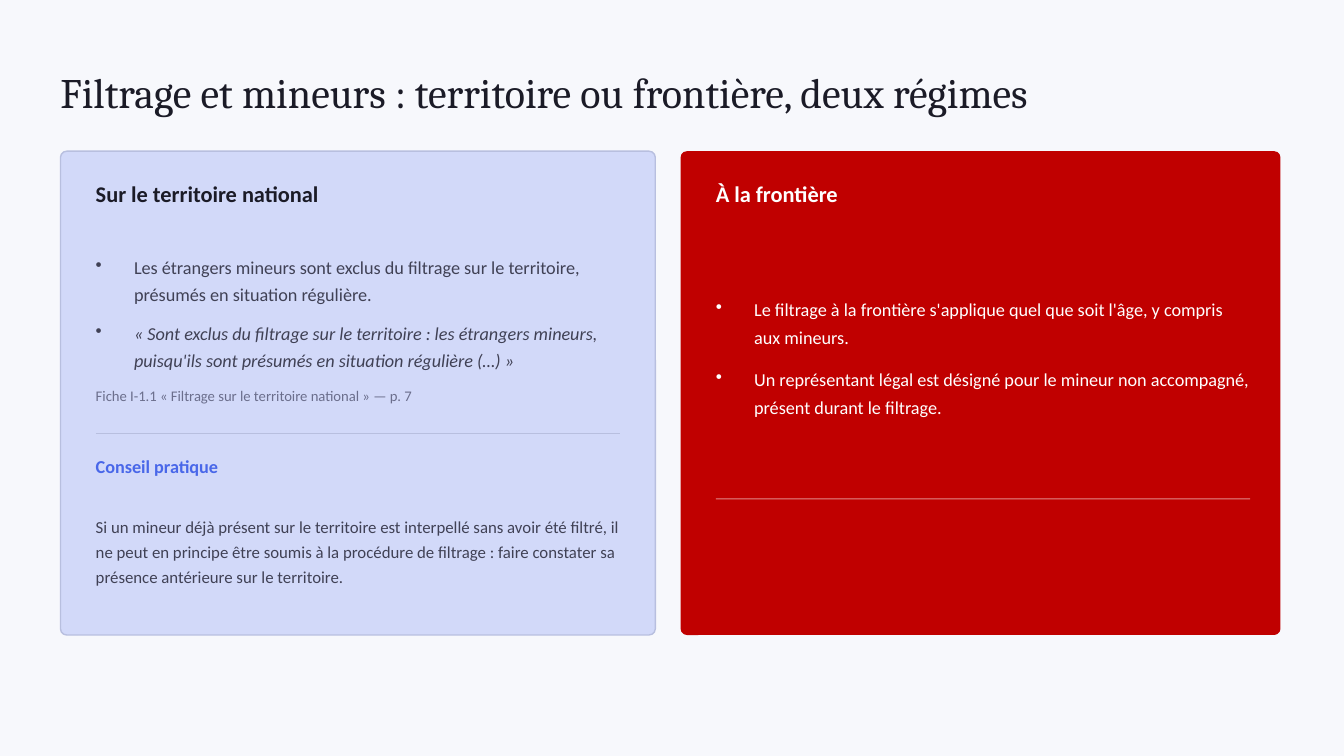
"""Build the slide comparing screening of minors inland and at the border."""
from dataclasses import dataclass

from lxml import etree
from pptx import Presentation
from pptx import util as u
from pptx.dml.color import RGBColor
from pptx.enum import shapes, text
from pptx.oxml.ns import qn
from pptx.slide import Slide

PX = 9144
PAGE_WIDTH, PAGE_HEIGHT = 1333, 750
BULLET_INDENT = 38
CARD_TOP, CARD_HEIGHT, CARD_PADDING = 150, 480, 35

PAPER = RGBColor(0xF7, 0xF8, 0xFC)
INK = RGBColor(0x1B, 0x1B, 0x27)
BODY = RGBColor(0x40, 0x41, 0x55)
MUTED = RGBColor(0x6B, 0x6E, 0x8C)
ACCENT = RGBColor(0x49, 0x67, 0xE9)
LAVENDER = RGBColor(0xD2, 0xD9, 0xF9)
EDGE = RGBColor(0xB8, 0xBF, 0xDF)
RED = RGBColor(0xC0, 0x00, 0x00)
WHITE = RGBColor(0xFF, 0xFF, 0xFF)


@dataclass(frozen=True)
class Line:
    """One paragraph with its type style."""

    words: str
    size: float
    color: RGBColor
    font: str = "Calibri"
    bold: bool = False
    italic: bool = False
    bullet: bool = False


@dataclass(frozen=True)
class Block:
    """Paragraphs placed by top and height, sharing their spacing."""

    top: int
    height: int
    lines: tuple[Line, ...]
    spacing: float = 1.0
    after: int = 0


@dataclass(frozen=True)
class Rule:
    """A horizontal divider inside a card."""

    top: int
    color: RGBColor
    weight: float
    opacity: int = 100


@dataclass(frozen=True)
class Card:
    """A rounded panel with its divider and text blocks."""

    left: int
    width: int
    text_width: int
    fill: RGBColor
    edge: RGBColor | None
    rule: Rule
    blocks: tuple[Block, ...]


TITLE = Block(45, 90, (
    Line("Filtrage et mineurs : territoire ou frontière, deux régimes", 30, INK, "Cambria"),
), 1.04)

CARDS = (
    Card(60, 590, 520, LAVENDER, EDGE, Rule(430, EDGE, 1), (
        Block(170, 45, (Line("Sur le territoire national", 16, INK, bold=True),)),
        Block(225, 200, (
            Line("Les étrangers mineurs sont exclus du filtrage sur le territoire, "
                 "présumés en situation régulière.", 13, BODY, bullet=True),
            Line("« Sont exclus du filtrage sur le territoire : les étrangers mineurs, "
                 "puisqu'ils sont présumés en situation régulière (…) »",
                 13, BODY, italic=True, bullet=True),
            Line("Fiche I-1.1 « Filtrage sur le territoire national » — p. 7", 10.5, MUTED),
        ), 1.25, 8),
        Block(445, 35, (Line("Conseil pratique", 13, ACCENT, bold=True),)),
        Block(480, 130, (
            Line("Si un mineur déjà présent sur le territoire est interpellé sans avoir été "
                 "filtré, il ne peut en principe être soumis à la procédure de filtrage : "
                 "faire constater sa présence antérieure sur le territoire.", 12, BODY),
        ), 1.25),
    )),
    Card(675, 595, 530, RED, None, Rule(495, WHITE, 0.75, 55), (
        Block(170, 45, (Line("À la frontière", 16, WHITE, bold=True),)),
        Block(225, 255, (
            Line("Le filtrage à la frontière s'applique quel que soit l'âge, "
                 "y compris aux mineurs.", 13, WHITE, bullet=True),
            Line("Un représentant légal est désigné pour le mineur non accompagné, "
                 "présent durant le filtrage.", 13, WHITE, bullet=True),
        ), 1.28, 10),
    )),
)


def px(length: int) -> u.Emu:
    """Turn whole pixels into EMU."""
    return u.Emu(length * PX)


def draw_block(page: Slide, left: int, width: int, block: Block) -> None:
    """Add a text box holding the block's paragraphs."""
    box = page.shapes.add_textbox(px(left), px(block.top), px(width), px(block.height))
    frame = box.text_frame
    frame.word_wrap = True
    frame.vertical_anchor = text.MSO_ANCHOR.MIDDLE
    frame.margin_left = frame.margin_right = frame.margin_top = frame.margin_bottom = 0
    for index, line in enumerate(block.lines):
        para = frame.add_paragraph() if index else frame.paragraphs[0]
        para.line_spacing = block.spacing
        para.space_after = u.Pt(block.after)
        if line.bullet:
            properties = para._p.get_or_add_pPr()
            properties.set("marL", str(px(BULLET_INDENT)))
            properties.set("indent", str(-px(BULLET_INDENT)))
            etree.SubElement(properties, qn("a:buChar"), char="•")
        span = para.add_run()
        span.text = line.words
        span.font.name = line.font
        span.font.size = u.Pt(line.size)
        span.font.color.rgb = line.color
        span.font.bold = line.bold
        span.font.italic = line.italic


def draw_rule(page: Slide, left: int, width: int, rule: Rule) -> None:
    """Add a horizontal divider."""
    divider = page.shapes.add_connector(
        shapes.MSO_CONNECTOR.STRAIGHT,
        px(left), px(rule.top), px(left + width), px(rule.top),
    )
    divider.line.color.rgb = rule.color
    divider.line.width = u.Pt(rule.weight)
    properties = divider._element.spPr
    if rule.opacity < 100:
        color = properties.find(".//" + qn("a:srgbClr"))
        etree.SubElement(color, qn("a:alpha"), val=str(rule.opacity * 1000))
    etree.SubElement(properties, qn("a:effectLst"))


def draw_card(page: Slide, card: Card) -> None:
    """Add a panel, its divider and its text."""
    panel = page.shapes.add_shape(
        shapes.MSO_SHAPE.ROUNDED_RECTANGLE,
        px(card.left), px(CARD_TOP), px(card.width), px(CARD_HEIGHT),
    )
    panel.adjustments[0] = 0.013
    panel.shadow.inherit = False
    panel.fill.solid()
    panel.fill.fore_color.rgb = card.fill
    if card.edge is None:
        panel.line.fill.background()
    else:
        panel.line.color.rgb = card.edge
        panel.line.width = u.Pt(1)
    left = card.left + CARD_PADDING
    draw_rule(page, left, card.text_width, card.rule)
    for block in card.blocks:
        draw_block(page, left, card.text_width, block)


def main() -> None:
    """Build and save the deck."""
    deck = Presentation()
    deck.slide_width, deck.slide_height = px(PAGE_WIDTH), px(PAGE_HEIGHT)
    page = deck.slides.add_slide(deck.slide_layouts[6])
    page.background.fill.solid()
    page.background.fill.fore_color.rgb = PAPER
    draw_block(page, 60, 1213, TITLE)
    for card in CARDS:
        draw_card(page, card)
    deck.save("out.pptx")


if __name__ == "__main__":
    main()
